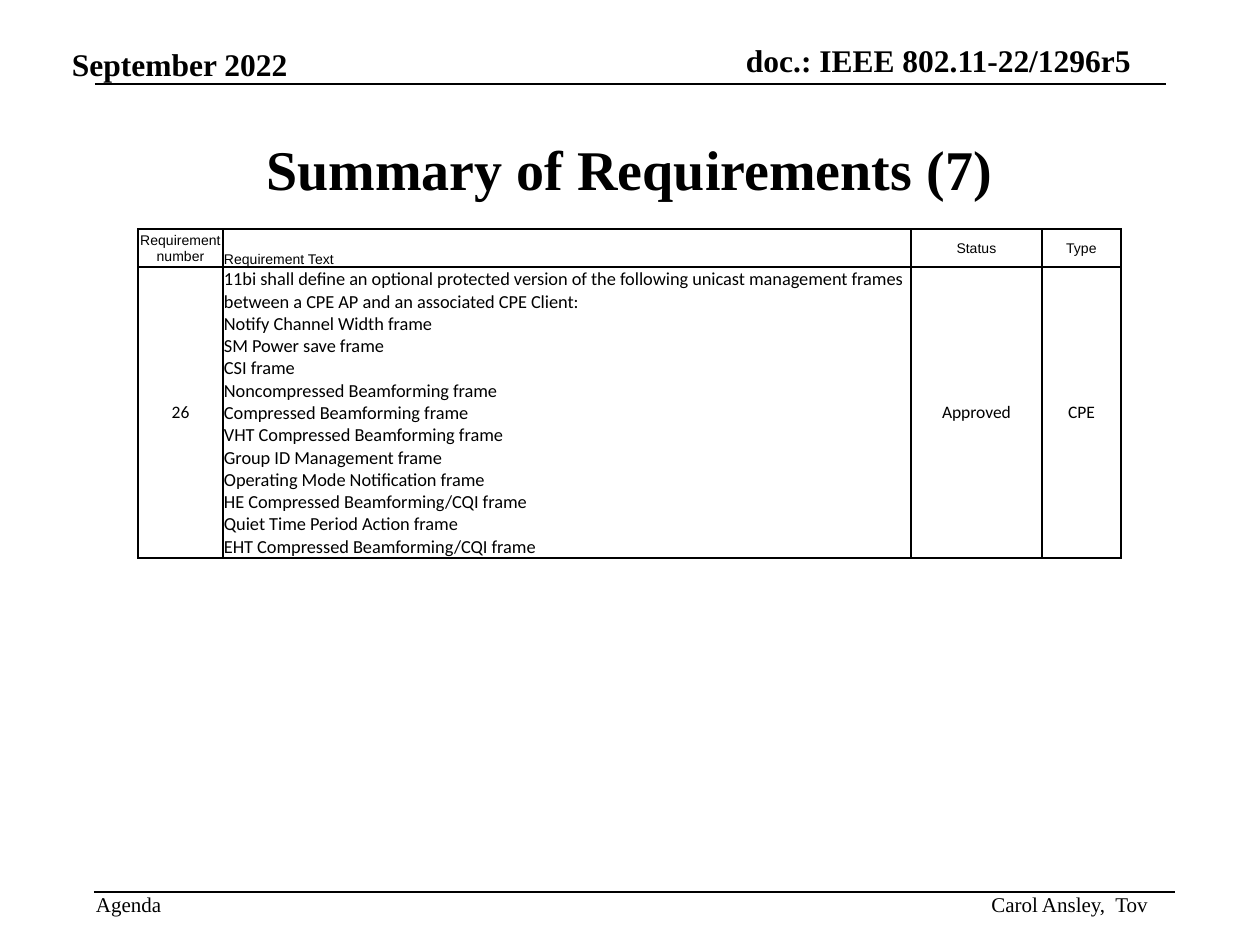
from lxml import etree
from pptx import Presentation
from pptx.dml.color import RGBColor
from pptx.enum.shapes import MSO_CONNECTOR
from pptx.enum.text import MSO_ANCHOR, PP_ALIGN
from pptx.oxml.ns import qn
from pptx.util import Emu, Pt

BLACK = RGBColor(0x00, 0x00, 0x00)
SERIF, SANS, BODY = "Times New Roman", "Arial", "Calibri"
LEFT, CENTER, RIGHT = PP_ALIGN.LEFT, PP_ALIGN.CENTER, PP_ALIGN.RIGHT
TOP, MIDDLE, BOTTOM = MSO_ANCHOR.TOP, MSO_ANCHOR.MIDDLE, MSO_ANCHOR.BOTTOM
STRAIGHT = MSO_CONNECTOR.STRAIGHT
PX_PER_INCH = 126

COLUMN_WIDTHS = [85, 688, 131, 79]
ROW_HEIGHTS = [38, 291]
HEADINGS = ["Requirement number", "Requirement Text", "Status", "Type"]
REQUIREMENT = "\n".join([
    "11bi shall define an optional protected version of the following unicast "
    "management frames between a CPE AP and an associated CPE Client:",
    "Notify Channel Width frame",
    "SM Power save frame",
    "CSI frame",
    "Noncompressed Beamforming frame",
    "Compressed Beamforming frame",
    "VHT Compressed Beamforming frame",
    "Group ID Management frame",
    "Operating Mode Notification frame",
    "HE Compressed Beamforming/CQI frame",
    "Quiet Time Period Action frame",
    "EHT Compressed Beamforming/CQI frame",
])
ENTRIES = ["26", REQUIREMENT, "Approved", "CPE"]


def px(length):
    return Emu(round(length * 914400 / PX_PER_INCH))


def write(para, text, font_name, size, align=LEFT, bold=False):
    para.text = text
    para.alignment = align
    para.font.name = font_name
    para.font.size = Pt(size)
    para.font.bold = bold
    para.font.color.rgb = BLACK


def clear_margins(frame):
    frame.margin_left = frame.margin_right = 0
    frame.margin_top = frame.margin_bottom = 0


def add_label(page, box, text, size, align=LEFT, anchor=TOP, bold=False):
    frame = page.shapes.add_textbox(*map(px, box)).text_frame
    clear_margins(frame)
    frame.word_wrap = False
    frame.vertical_anchor = anchor
    write(frame.paragraphs[0], text, SERIF, size, align, bold)


def add_rule(page, left, top, width):
    rule = page.shapes.add_connector(
        STRAIGHT, px(left), px(top), px(left + width), px(top))
    rule.line.color.rgb = BLACK
    rule.line.width = Pt(1)
    etree.SubElement(rule._element.spPr, qn("a:effectLst"))


def add_header(page, left, top):
    add_label(page, (left, top + 4, 218, 38), "September 2022", 18,
              anchor=BOTTOM, bold=True)
    add_label(page, (left + 669, top, 390, 38), "doc.: IEEE 802.11-22/1296r5",
              18, RIGHT, BOTTOM, True)
    add_rule(page, left + 23, top + 43, 1071)


def add_footer(page, left, top):
    add_rule(page, left, top, 1081)
    add_label(page, (left + 2, top, 67, 25), "Agenda", 12)
    add_label(page, (left + 890, top, 164, 25), "Carol Ansley,  Tov", 12,
              RIGHT, BOTTOM)


def add_title(page, left, top, width, height):
    title = page.shapes.title
    title.left, title.top = px(left), px(top)
    title.width, title.height = px(width), px(height)
    frame = title.text_frame
    clear_margins(frame)
    frame.vertical_anchor = MIDDLE
    write(frame.paragraphs[0], "Summary of Requirements (7)", SERIF, 32,
          CENTER, True)


def add_borders(cell):
    properties = cell._tc.get_or_add_tcPr()
    for side in ("a:lnL", "a:lnR", "a:lnT", "a:lnB"):
        line = etree.SubElement(properties, qn(side), w=str(Pt(1)))
        fill = etree.SubElement(line, qn("a:solidFill"))
        etree.SubElement(fill, qn("a:srgbClr"), val=str(BLACK))


def add_requirements(page, left, top):
    table = page.shapes.add_table(
        len(ROW_HEIGHTS), len(COLUMN_WIDTHS), px(left), px(top),
        px(sum(COLUMN_WIDTHS)), px(sum(ROW_HEIGHTS))).table
    table.first_row = table.horz_banding = False
    for column, width in zip(table.columns, COLUMN_WIDTHS):
        column.width = px(width)
    for row, height in zip(table.rows, ROW_HEIGHTS):
        row.height = px(height)

    # Heading row, then the requirement; only the text column sits low and left
    rows = [(HEADINGS, SANS, 8, 8), (ENTRIES, BODY, 10, 10.5)]
    for row, (texts, font_name, size, text_size) in zip(table.rows, rows):
        for index, (cell, text) in enumerate(zip(row.cells, texts)):
            is_text = index == 1
            cell.margin_left = cell.margin_right = cell.margin_top = px(1)
            cell.margin_bottom = 0
            cell.vertical_anchor = BOTTOM if is_text else MIDDLE
            write(cell.text_frame.paragraphs[0], text, font_name,
                  text_size if is_text else size, LEFT if is_text else CENTER)
            add_borders(cell)
            cell.fill.background()


def main():
    deck = Presentation()
    deck.slide_width, deck.slide_height = px(1260), px(945)
    page = deck.slides.add_slide(deck.slide_layouts[5])
    add_header(page, 72, 41)
    add_footer(page, 94, 892)
    add_title(page, 94, 94, 1071, 148)
    add_requirements(page, 138, 229)
    deck.save("out.pptx")


if __name__ == "__main__":
    main()
